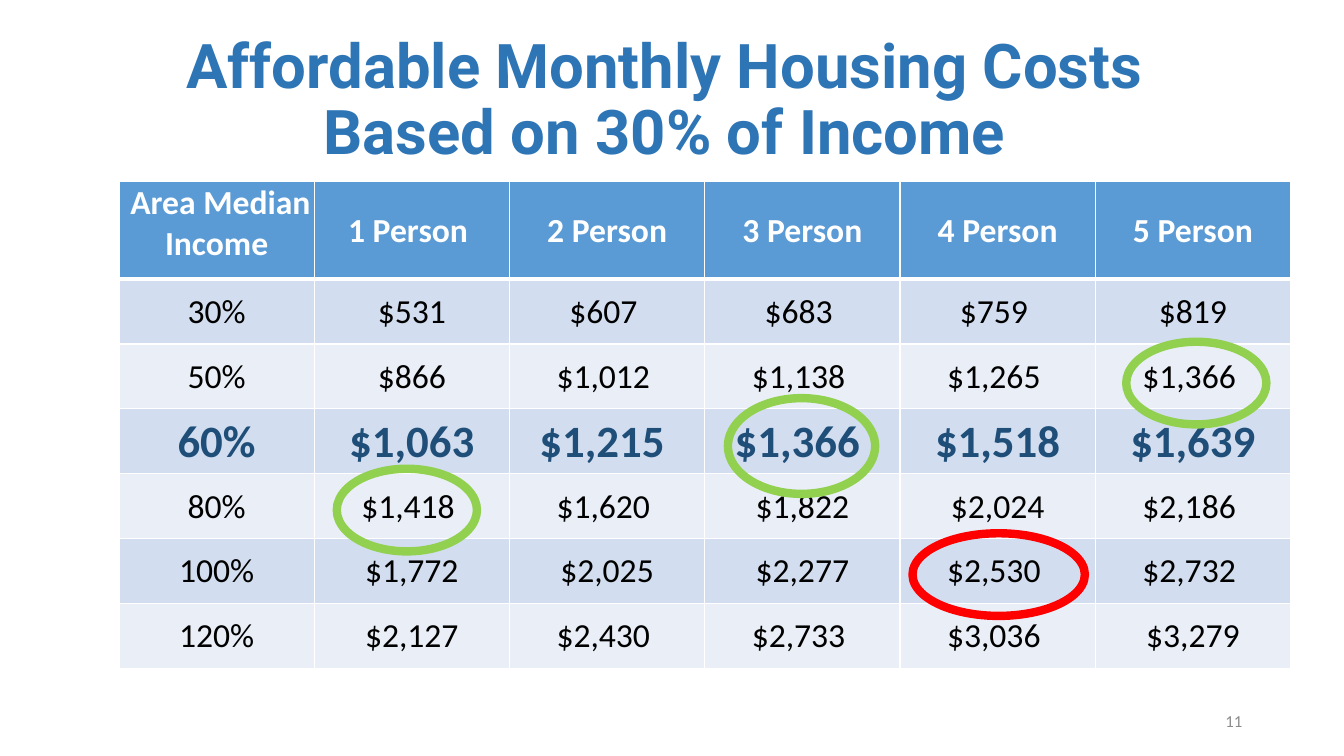
from lxml import etree
from pptx import Presentation, util as u
from pptx.dml.color import RGBColor
from pptx.enum import shapes, text
from pptx.oxml.ns import qn

# Content
TITLE = ["Affordable Monthly Housing Costs ", "Based on 30% of Income "]
PAGE = "11"
HEADER = [" Area Median Income", "1 Person ", "2 Person", "3 Person", "4 Person", "5 Person"]
COSTS = [
    ("30%", "$531", "$607 ", "$683 ", "$759 ", "$819"),
    ("50%", "$866", "$1,012 ", "$1,138 ", "$1,265 ", "$1,366 "),
    ("60%", "$1,063", "$1,215 ", "$1,366 ", "$1,518", "$1,639"),
    ("80%", "$1,418 ", "$1,620 ", "$1,822", "$2,024", "$2,186 "),
    ("100%", "$1,772", "$2,025", "$2,277", "$2,530 ", "$2,732 "),
    ("120%", "$2,127", "$2,430 ", "$2,733 ", "$3,036 ", "$3,279"),
]
KEY_ROW = "60%"
RINGS = [  # left, top, width, height, colour
    (905, 529, 171, 82, "over"),
    (722, 395, 146, 95, "match"),
    (334, 465, 139, 82, "match"),
    (1117, 339, 139, 82, "match"),
]

THEME = {
    "title": "2E75B6", "header": "5B9BD5", "bands": ("D2DEEF", "EAEFF7"),
    "white": "FFFFFF", "body": "000000", "key": "1F4E79", "page": "8C8C8C",
    "over": "FF0000", "match": "92D050",
    "title_font": "Roboto", "body_font": "Calibri",
    "title_pt": 44, "body_pt": 24, "key_pt": 32, "page_pt": 12, "ring_pt": 6,
}

# Layout, 100 px to the inch
SLIDE = (1333, 750)
TITLE_BOX = (92, 28, 1150, 145)
TABLE_BOX = (118, 180, 1162, 483)
HEADER_H = 97
PAGE_BOX = (942, 695, 300, 40)


def px(n):
    return u.Emu(round(n * 9144))


def rgb(name):
    return RGBColor.from_string(THEME.get(name, name))


def add_run(p, words, size, color, font="body_font", bold=False):
    r = p.add_run()
    r.text = words
    r.font.size = u.Pt(THEME[size])
    r.font.name = THEME[font]
    r.font.bold = bold
    r.font.color.rgb = rgb(color)


def add_box(s, box, align):
    tf = s.shapes.add_textbox(*map(px, box)).text_frame
    tf.word_wrap = True
    tf.vertical_anchor = text.MSO_ANCHOR.MIDDLE
    p = tf.paragraphs[0]
    p.alignment = align
    return p


def set_borders(cell, bottom_pt, top_pt):
    tcPr = cell._tc.get_or_add_tcPr()
    for side, pt in (("lnL", 1), ("lnR", 1), ("lnT", top_pt), ("lnB", bottom_pt)):
        ln = etree.SubElement(tcPr, qn("a:" + side), w=str(u.Pt(pt)))
        fill = etree.SubElement(ln, qn("a:solidFill"))
        etree.SubElement(fill, qn("a:srgbClr"), val=THEME["white"])


def fill_cell(cell, words, row, col):
    is_header, is_key = row == 0, row > 0 and COSTS[row - 1][0] == KEY_ROW
    set_borders(cell, 3 if is_header else 1, 3 if row == 1 else 1)
    cell.fill.solid()
    cell.fill.fore_color.rgb = rgb("header" if is_header else THEME["bands"][(row - 1) % 2])
    cell.margin_left = cell.margin_right = cell.margin_top = px(1)
    cell.margin_bottom = 0
    at_top = is_header and col == 0
    cell.vertical_anchor = text.MSO_ANCHOR.TOP if at_top else text.MSO_ANCHOR.MIDDLE
    p = cell.text_frame.paragraphs[0]
    p.alignment = text.PP_ALIGN.CENTER
    color = "white" if is_header else "key" if is_key else "body"
    add_run(p, words, "key_pt" if is_key else "body_pt", color, bold=is_header or is_key)


def add_cost_table(s):
    rows = [HEADER, *COSTS]
    table = s.shapes.add_table(len(rows), len(HEADER), *map(px, TABLE_BOX)).table
    table.horz_banding = False
    for column in table.columns:
        column.width = px(TABLE_BOX[2] / len(HEADER))
    for i, values in enumerate(rows):
        table.rows[i].height = px((TABLE_BOX[3] - HEADER_H) / len(COSTS) if i else HEADER_H)
        for j, words in enumerate(values):
            fill_cell(table.cell(i, j), words, i, j)


def main():
    prs = Presentation()
    prs.slide_width, prs.slide_height = map(px, SLIDE)
    s = prs.slides.add_slide(prs.slide_layouts[6])

    # Title
    p = add_box(s, TITLE_BOX, text.PP_ALIGN.CENTER)
    p.line_spacing = 0.9
    for i, line in enumerate(TITLE):
        if i:
            p.add_line_break()
        add_run(p, line, "title_pt", "title", "title_font", True)

    # Costs by income level and household size
    add_cost_table(s)

    # Page number
    add_run(add_box(s, PAGE_BOX, text.PP_ALIGN.RIGHT), PAGE, "page_pt", "page")

    # Rings around the compared costs
    for *box, color in RINGS:
        sp = s.shapes.add_shape(shapes.MSO_SHAPE.OVAL, *map(px, box))
        sp.shadow.inherit = False
        sp.fill.background()
        sp.line.color.rgb = rgb(color)
        sp.line.width = u.Pt(THEME["ring_pt"])

    prs.save("out.pptx")


if __name__ == "__main__":
    main()
